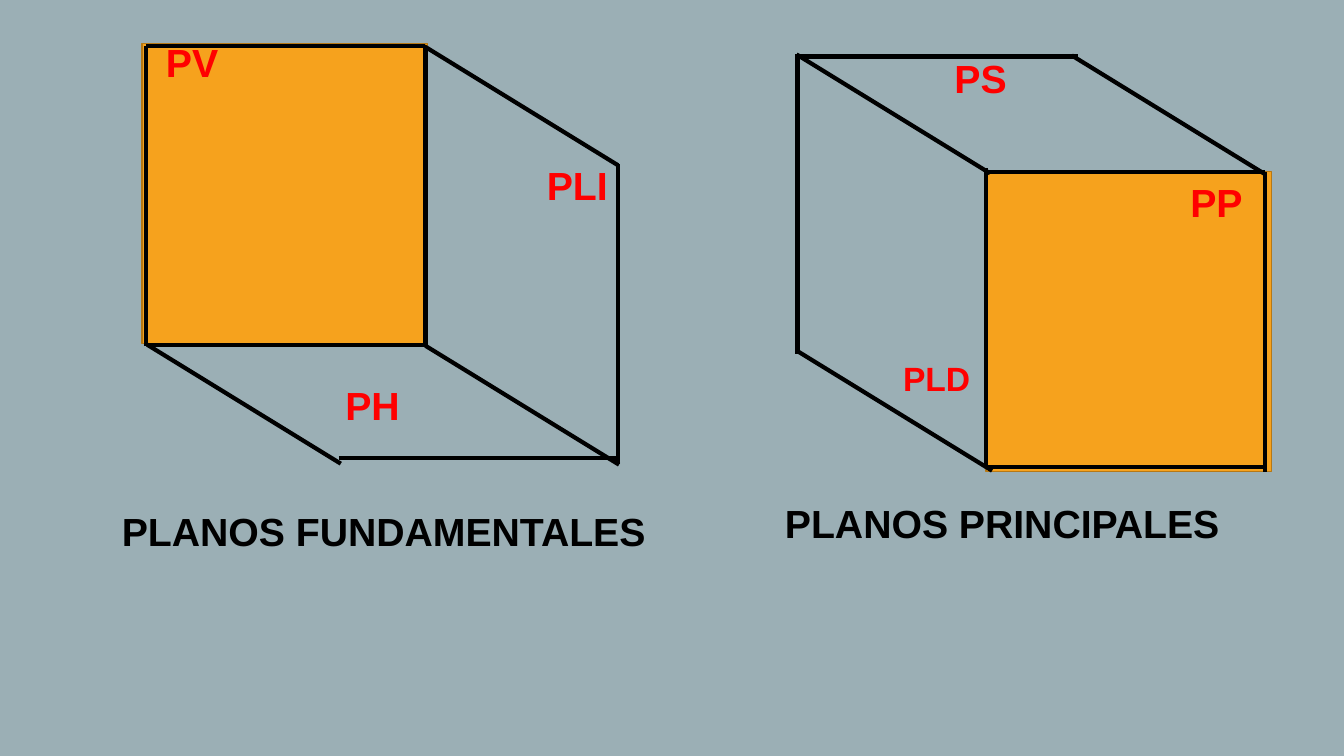
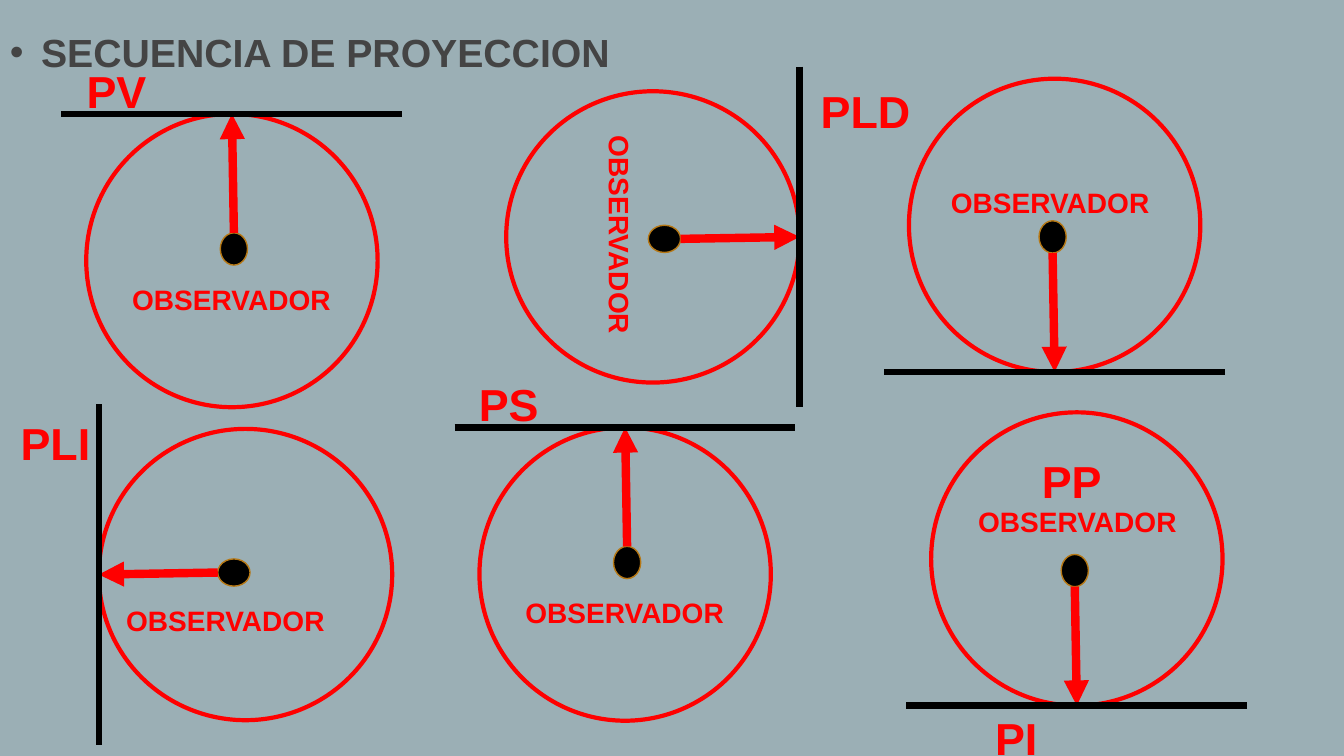
from dataclasses import dataclass

from lxml.etree import SubElement
from pptx import Presentation
from pptx.dml.color import RGBColor
from pptx.enum.shapes import MSO_CONNECTOR, MSO_SHAPE
from pptx.enum.text import MSO_AUTO_SIZE, PP_ALIGN
from pptx.oxml.ns import qn
from pptx.util import Inches, Pt

BACKGROUND, ORANGE, BROWN = "9BAFB5", "F6A21D", "B67815"
RED, BLACK, GRAY = "FF0000", "000000", "444444"
FONT = {"name": "Arial", "bold": True}


@dataclass(frozen=True)
class Label:
    """Centred text with its box, size, colour and rotation."""

    text: str
    left: float
    top: float
    width: float
    size: float = 28
    color: str = RED
    rotation: int = 0
    height: float = 0.57


@dataclass(frozen=True)
class Cube:
    """Orange face plus the starting points of the edges in each direction."""

    face: tuple[float, float]
    uprights: list[tuple[float, float]]
    diagonals: list[tuple[float, float]]
    horizontals: list[tuple[float, float]]
    labels: list[Label]


@dataclass(frozen=True)
class Station:
    """Observer looking at a plane, turned clockwise about the point of contact."""

    contact: tuple[float, float]
    turn: int
    labels: list[Label]

    def locate(self, across: float, depth: float) -> tuple[float, float]:
        """Return the slide position of a point given relative to the contact."""
        x, y = self.contact
        dx, dy = {0: (across, depth), 90: (-depth, across),
                  180: (-across, -depth), 270: (depth, -across)}[self.turn]
        return x + dx, y + dy


def rgb(color: str) -> RGBColor:
    """Turn a hex string into a colour."""
    return RGBColor.from_string(color)


def observer(left: float, top: float, rotation: int = 0) -> Label:
    """Return the observer label at a place."""
    return Label("OBSERVADOR", left, top, 2.91, 20, RED, rotation, 0.44)


def plane(text: str, left: float, top: float, width: float = 1.1) -> Label:
    """Return the name of a projection plane."""
    return Label(text, left, top, width, 32, height=0.64)


CUBES = [
    Cube((1.41, 0.43),
         [(4.22, 0.46), (1.45, 0.46), (6.13, 1.63)],
         [(4.22, 3.43), (1.46, 3.42), (4.21, 0.46)],
         [(1.45, 0.46), (3.36, 4.54), (1.46, 3.42)],
         [Label("PV", 1.41, 0.33, 0.99), Label("PH", 3.15, 3.73, 1.09),
          Label("PLI", 5.18, 1.55, 1.09),
          Label("PLANOS FUNDAMENTALES", 0.31, 4.98, 6.99, color=BLACK)]),
    Cube((9.78, 1.7),
         [(12.55, 1.71), (7.91, 0.54), (9.78, 1.67)],
         [(10.63, 0.55), (7.92, 3.49), (7.9, 0.54)],
         [(9.78, 1.71), (9.78, 4.63), (7.92, 0.56)],
         [Label("PP", 11.52, 1.72, 1.09), Label("PS", 9.18, 0.49, 1.09),
          Label("PLD", 8.74, 3.5, 1.1, 24),
          Label("PLANOS PRINCIPALES", 7.16, 4.9, 5.56, color=BLACK)]),
]

STATIONS = [
    Station((7.93, 2.35), 90, [observer(4.69, 2.11, 90), plane("PLD", 7.97, 0.78, 1.23)]),
    Station((10.46, 3.69), 180, [observer(8.96, 1.79), plane("PP", 10.08, 4.45)]),
    Station((2.3, 1.13), 0, [observer(0.84, 2.75), plane("PV", 0.73, 0.58, 0.85)]),
    Station((0.98, 5.7), 270, [observer(0.78, 5.94), plane("PLI", 0, 4.08)]),
    Station((6.2, 4.24), 0, [observer(4.74, 5.86), plane("PS", 4.62, 3.69, 0.85)]),
    Station((10.68, 7), 180, [observer(9.23, 4.96), plane("PI", 9.53, 7)]),
]


def add_label(shapes, label: Label, align=PP_ALIGN.CENTER):
    """Write a label and return its paragraph."""
    box = shapes.add_textbox(Inches(label.left), Inches(label.top),
                             Inches(label.width), Inches(label.height))
    box.rotation = label.rotation
    frame = box.text_frame
    frame.word_wrap = True
    frame.auto_size = MSO_AUTO_SIZE.SHAPE_TO_FIT_TEXT
    paragraph = frame.paragraphs[0]
    paragraph.alignment = align
    run = paragraph.add_run()
    run.text = label.text
    for name, value in (FONT | {"size": Pt(label.size)}).items():
        setattr(run.font, name, value)
    run.font.color.rgb = rgb(label.color)
    return paragraph


def add_outline(shapes, kind, center: tuple[float, float], size: tuple[float, float],
                line: str, weight: float, fill: str | None = None, rotation: int = 0) -> None:
    """Draw a preset shape around a centre."""
    (x, y), (width, height) = center, size
    shape = shapes.add_shape(kind, Inches(x - width / 2), Inches(y - height / 2),
                             Inches(width), Inches(height))
    shape.shadow.inherit = False
    shape.rotation = rotation
    shape.line.color.rgb = rgb(line)
    shape.line.width = Pt(weight)
    if fill:
        shape.fill.solid()
        shape.fill.fore_color.rgb = rgb(fill)
    else:
        shape.fill.background()


def add_line(shapes, start: tuple[float, float], end: tuple[float, float],
             color: str, weight: float, arrow: bool = False) -> None:
    """Draw a straight line, with an arrowhead at its end if asked."""
    line = shapes.add_connector(MSO_CONNECTOR.STRAIGHT, *map(Inches, start + end))
    line.line.color.rgb = rgb(color)
    line.line.width = Pt(weight)
    if arrow:
        SubElement(line.line._get_or_add_ln(), qn("a:tailEnd"), type="triangle")
    SubElement(line._element.spPr, qn("a:effectLst"))


def draw_cube(shapes, cube: Cube) -> None:
    """Draw a cube with its named planes."""
    width, height = 2.83, 2.98
    left, top = cube.face
    add_outline(shapes, MSO_SHAPE.RECTANGLE, (left + width / 2, top + height / 2),
                (width, height), BROWN, 1, ORANGE)
    edges = [(cube.uprights, (0, 2.97)), (cube.diagonals, (1.92, 1.18)),
             (cube.horizontals, (2.77, 0))]
    for starts, (dx, dy) in edges:
        for x, y in starts:
            add_line(shapes, (x, y), (x + dx, y + dy), BLACK, 3)
    for label in cube.labels:
        add_label(shapes, label)


def draw_station(shapes, station: Station) -> None:
    """Draw the circle, observer, line of sight and plane of a station."""
    at, turn = station.locate, station.turn
    add_outline(shapes, MSO_SHAPE.OVAL, at(0, 1.455), (2.89, 2.91), RED, 3, rotation=turn)
    add_outline(shapes, MSO_SHAPE.OVAL, at(0.02, 1.34), (0.27, 0.32), BROWN, 1, BLACK, turn)
    add_line(shapes, at(0.02, 1.18), at(0, 0), RED, 6, arrow=True)
    add_line(shapes, at(-1.69, 0), at(1.69, 0), BLACK, 4.5)
    for label in station.labels:
        add_label(shapes, label)


def add_heading(shapes, text: str) -> None:
    """Write the bulleted heading."""
    heading = Label(text, 0, 0.23, 12.96, color=GRAY)
    properties = add_label(shapes, heading, PP_ALIGN.LEFT)._p.get_or_add_pPr()
    for name, indent in {"marL": 0.31, "indent": -0.31}.items():
        properties.set(name, str(Inches(indent)))
    SubElement(properties, qn("a:buFont"), typeface="Arial")
    SubElement(properties, qn("a:buChar"), char="•")


def main() -> None:
    """Build both slides and save them."""
    deck = Presentation()
    deck.slide_width, deck.slide_height = Inches(13.33), Inches(7.5)
    backdrop = deck.slide_master.background.fill
    backdrop.solid()
    backdrop.fore_color.rgb = rgb(BACKGROUND)
    blank = deck.slide_layouts[6]

    planes = deck.slides.add_slide(blank).shapes
    for cube in CUBES:
        draw_cube(planes.add_group_shape().shapes, cube)

    sequence = deck.slides.add_slide(blank).shapes
    add_heading(sequence, "SECUENCIA DE PROYECCION")
    for station in STATIONS:
        draw_station(sequence.add_group_shape().shapes, station)

    deck.save("out.pptx")


if __name__ == "__main__":
    main()
